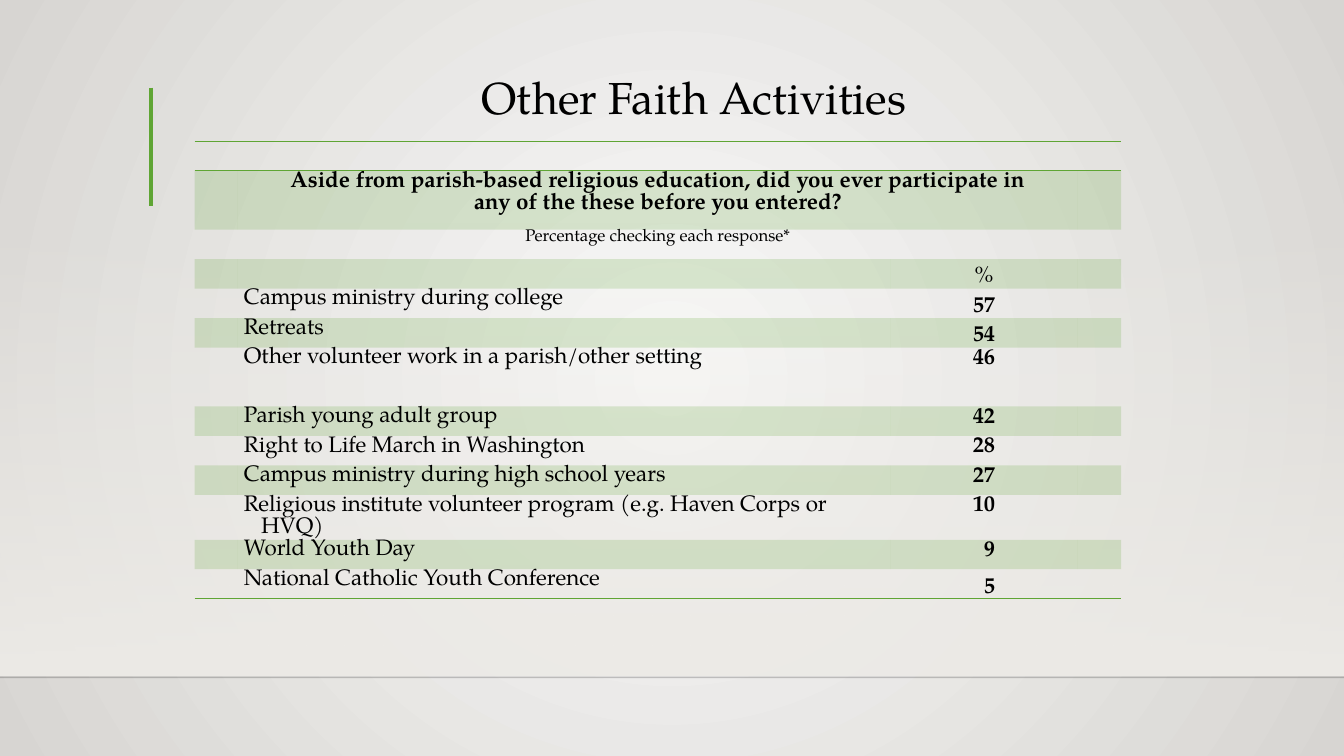
from dataclasses import dataclass
from typing import Any, Optional

from lxml import etree
from pptx import Presentation
from pptx import util as u
from pptx.dml import color
from pptx.enum import shapes, text
from pptx.oxml import ns, parse_xml


@dataclass(frozen=True)
class Theme:
    font: str = "TeX Gyre Pagella"
    ink: str = "000000"
    accent: str = "5FA534"
    floor_edge: str = "000001"
    wall: str = "EDEBE7"
    glow: str = "FAFAF9"
    rim: str = "D7D5D2"
    title_size: int = 32
    body_size: int = 16
    note_size: int = 12
    band_alpha: int = 20


@dataclass(frozen=True)
class Rule:
    start: tuple[float, float]
    end: tuple[float, float]
    hue: str
    width: float
    alpha: int = 100


@dataclass(frozen=True)
class Activity:
    name: str
    percent: str
    hang: float = 0.23
    low: bool = False
    units: int = 1


@dataclass(frozen=True)
class Entry:
    lines: tuple[str, ...] = ("",)
    size: int = 16
    bold: bool = False
    centred: bool = True
    low: bool = False
    hang: float = 0
    shift: float = 0


THEME = Theme()
RULES = [
    Rule((0, 6.72), (13.33, 6.72), THEME.floor_edge, 1, 20),
    Rule((1.5, 0.87), (1.5, 2.04), THEME.accent, 3),
]
QUESTION = (
    "Aside from parish-based religious education, did you ever participate in",
    "any of the these before you entered?",
)
ACTIVITIES = [
    Activity("Campus ministry during college", "57", low=True),
    Activity("Retreats", "54", low=True),
    Activity("Other volunteer work in a parish/other setting", "46", units=2),
    Activity("Parish young adult group", "42", 0.17),
    Activity("Right to Life March in Washington", "28"),
    Activity("Campus ministry during high school years", "27", 0.17),
    Activity("Religious institute volunteer program (e.g. Haven Corps or HVQ)", "10", 0.17),
    Activity("World Youth Day", "9", 0.17),
    Activity("National Catholic Youth Conference", "5", low=True),
]
COLUMNS = [0.43, 6.47, 1.86, 0.43]
TABLE_LEFT, TABLE_TOP, TABLE_HEIGHT = 1.93, 1.4, 4.39
DIGIT_WIDTH = 0.11
PLAIN_TABLE_STYLE = "{2D5ABB26-0587-4C30-8999-92F81FD0307C}"


def apply(target: Any, formats: dict[str, Any]) -> None:
    for name, value in formats.items():
        setattr(target, name, value)


def add_alpha(owner: Any, percent: int) -> None:
    rgb = next(owner.iter(ns.qn("a:srgbClr")))
    etree.SubElement(rgb, ns.qn("a:alpha")).set("val", str(percent * 1000))


def paint_gradient(fill: Any, owner: Any, stops: list[tuple[str, int]], direction: str) -> None:
    """Spread (colour, opacity) stops evenly over a gradient."""
    fill.gradient()
    gradient = next(owner.iter(ns.qn("a:gradFill")))
    marks = "".join(
        f'<a:gs pos="{i * 100000 // (len(stops) - 1)}"><a:srgbClr val="{hue}">'
        f'<a:alpha val="{alpha * 1000}"/></a:srgbClr></a:gs>'
        for i, (hue, alpha) in enumerate(stops)
    )
    fresh = parse_xml(f'<a:gradFill {ns.nsdecls("a")} rotWithShape="1">'
                      f"<a:gsLst>{marks}</a:gsLst>{direction}</a:gradFill>")
    gradient.getparent().replace(gradient, fresh)


def style_font(font: Any, size: int, bold: bool = False) -> None:
    apply(font, {"name": THEME.font, "size": u.Pt(size), "bold": bold})
    font.color.rgb = color.RGBColor.from_string(THEME.ink)


def draw_rule(slide: Any, rule: Rule) -> None:
    ends = [u.Inches(v) for v in rule.start + rule.end]
    line = slide.shapes.add_connector(shapes.MSO_CONNECTOR.STRAIGHT, *ends)
    line.line.color.rgb = color.RGBColor.from_string(rule.hue)
    line.line.width = u.Pt(rule.width)
    properties = line._element.spPr
    if rule.alpha < 100:
        add_alpha(properties, rule.alpha)
    etree.SubElement(properties, ns.qn("a:effectLst"))


def draw_backdrop(slide: Any) -> None:
    paint_gradient(
        slide.background.fill, slide._element, [(THEME.glow, 100), (THEME.rim, 100)],
        '<a:path path="circle"><a:fillToRect l="50000" t="50000" r="50000" b="50000"/></a:path>')
    wall = slide.shapes.add_shape(
        shapes.MSO_SHAPE.RECTANGLE, 0, u.Inches(2.2), u.Inches(13.33), u.Inches(4.5))
    wall.shadow.inherit = False
    wall.line.fill.background()
    paint_gradient(wall.fill, wall._element, [(THEME.wall, 0), (THEME.wall, 100)],
                   '<a:lin ang="5400000" scaled="0"/>')


def draw_title(slide: Any) -> None:
    title = slide.shapes.add_textbox(*map(u.Inches, (1.68, 0.57, 10.41, 0.71)))
    apply(title.text_frame, {"word_wrap": True, "vertical_anchor": text.MSO_ANCHOR.BOTTOM})
    heading = title.text_frame.paragraphs[0]
    apply(heading, {"alignment": text.PP_ALIGN.CENTER, "line_spacing": 0.9})
    run = heading.add_run()
    run.text = "Other Faith Activities"
    style_font(run.font, THEME.title_size)


def write_cell(cell: Any, entry: Entry) -> None:
    apply(cell, {
        "margin_left": u.Inches(0.06), "margin_right": u.Inches(0.06),
        "margin_top": 0, "margin_bottom": 0,
        "vertical_anchor": text.MSO_ANCHOR.BOTTOM if entry.low else text.MSO_ANCHOR.TOP,
    })
    for i, line in enumerate(entry.lines):
        frame = cell.text_frame
        paragraph = frame.add_paragraph() if i else frame.paragraphs[0]
        apply(paragraph, {
            "alignment": text.PP_ALIGN.CENTER if entry.centred else text.PP_ALIGN.LEFT,
            "line_spacing": u.Pt(entry.size),
        })
        properties = paragraph._p.get_or_add_pPr()
        properties.set("marL", str(u.Inches(entry.hang + entry.shift)))
        properties.set("indent", str(-u.Inches(entry.hang)))
        if line:
            run = paragraph.add_run()
            run.text = line
            style_font(run.font, entry.size, entry.bold)
        else:
            style_font(paragraph.font, entry.size)


def fill_cell(cell: Any, banded: bool, edges: list[str]) -> None:
    if banded:
        cell.fill.solid()
        cell.fill.fore_color.rgb = color.RGBColor.from_string(THEME.accent)
        add_alpha(cell._tc.tcPr, THEME.band_alpha)
    else:
        cell.fill.background()
    for position, edge in enumerate(edges):
        cell._tc.tcPr.insert(position, parse_xml(
            f'<a:{edge} {ns.nsdecls("a")} w="12700"><a:solidFill>'
            f'<a:srgbClr val="{THEME.accent}"/></a:solidFill></a:{edge}>'))


def activity_entries(activity: Activity) -> dict[int, Entry]:
    shift = DIGIT_WIDTH if len(activity.percent) == 1 else 0
    return {
        1: Entry((activity.name,), centred=False, hang=activity.hang),
        2: Entry((activity.percent,), bold=True, low=activity.low, shift=shift),
    }


def draw_table(slide: Any) -> None:
    # Rows: empty strip, question, note, column head, activities
    rows: list[dict[int, Entry]] = [
        {},
        {1: Entry(QUESTION, THEME.body_size, bold=True)},
        {1: Entry(("Percentage checking each response*",), THEME.note_size)},
        {2: Entry(("%",), THEME.body_size, low=True)},
        *map(activity_entries, ACTIVITIES),
    ]
    units = [1, 2, 1, 1] + [activity.units for activity in ACTIVITIES]
    frame = slide.shapes.add_table(
        len(rows), len(COLUMNS), u.Inches(TABLE_LEFT), u.Inches(TABLE_TOP),
        u.Inches(sum(COLUMNS)), u.Inches(TABLE_HEIGHT))
    table = frame.table
    apply(table, {"first_row": False, "horz_banding": False})
    next(table._tbl.iter(ns.qn("a:tableStyleId"))).text = PLAIN_TABLE_STYLE
    for column, width in zip(table.columns, COLUMNS):
        column.width = u.Inches(width)
    last = len(rows) - 1
    borders: dict[int, list[str]] = {0: ["lnT", "lnB"], last: ["lnB"]}
    for r, entries in enumerate(rows):
        table.rows[r].height = u.Inches(TABLE_HEIGHT * units[r] / sum(units))
        for c in range(len(COLUMNS)):
            write_cell(table.cell(r, c), entries.get(c, Entry()))
            fill_cell(table.cell(r, c), r % 2 == 1, borders.get(r, []))
    for r, first, final in [(0, 0, 3), (1, 1, 2), (2, 1, 2)]:
        table.cell(r, first).merge(table.cell(r, final))


def main() -> None:
    deck = Presentation()
    apply(deck, {"slide_width": u.Inches(13.33), "slide_height": u.Inches(7.5)})
    slide = deck.slides.add_slide(deck.slide_layouts[6])
    draw_backdrop(slide)
    for rule in RULES:
        draw_rule(slide, rule)
    draw_title(slide)
    draw_table(slide)
    deck.save("out.pptx")


if __name__ == "__main__":
    main()
